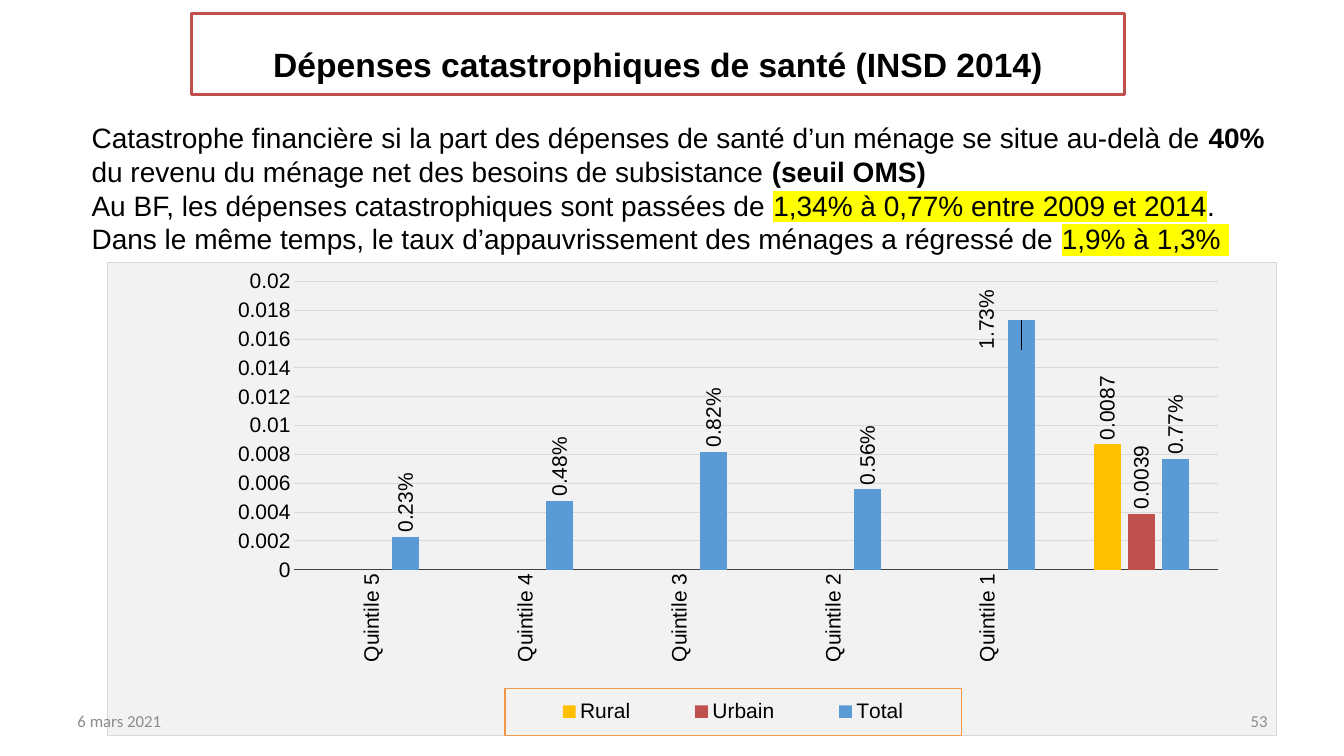
from dataclasses import dataclass
from typing import Optional

from lxml import etree
from pptx import Presentation
from pptx import util as u
from pptx.chart.data import CategoryChartData
from pptx.dml.color import RGBColor
from pptx.enum import chart as charts, shapes, text
from pptx.oxml import parse_xml
from pptx.oxml.ns import nsdecls, qn

PX = 9144
BLACK, GRAY, GRID = "000000", "8C8C8C", "D9D9D9"
RED, YELLOW = "C0504D", "FFFF00"


@dataclass(frozen=True)
class Span:
    words: str
    bold: bool = False
    highlight: Optional[str] = None


@dataclass(frozen=True)
class TextBlock:
    left: int
    top: int
    width: int
    height: int
    paragraphs: tuple[tuple[Span, ...], ...]
    size: int
    font: str = "Arial"
    color: str = BLACK
    align: text.PP_ALIGN = text.PP_ALIGN.LEFT
    anchor: text.MSO_ANCHOR = text.MSO_ANCHOR.MIDDLE
    spacing: float = 1.0
    outline: Optional[str] = None


@dataclass(frozen=True)
class Bars:
    name: str
    values: tuple[Optional[float], ...]
    color: str
    label_format: str = "General"


TITLE = TextBlock(
    190, 13, 925, 81,
    ((Span("Dépenses catastrophiques de santé (INSD 2014)", bold=True),),),
    24, align=text.PP_ALIGN.CENTER, spacing=1.5, outline=RED,
)
BODY = TextBlock(
    81, 115, 1186, 145,
    (
        (
            Span("Catastrophe financière si la part des dépenses de santé d’un ménage se situe au-delà de "),
            Span("40% ", bold=True),
            Span("du revenu du ménage net des besoins de subsistance "),
            Span("(seuil OMS)", bold=True),
        ),
        (
            Span("Au BF, les dépenses catastrophiques sont passées de "),
            Span("1,34% à 0,77% entre 2009 et 2014", highlight=YELLOW),
            Span(". Dans le même temps, le taux d’appauvrissement des ménages a régressé de "),
            Span("1,9% à 1,3% ", highlight=YELLOW),
        ),
    ),
    20, anchor=text.MSO_ANCHOR.TOP,
)
FOOTERS = (
    TextBlock(67, 695, 311, 40, ((Span("6 mars 2021"),),), 12, "Calibri", GRAY),
    TextBlock(956, 695, 311, 40, ((Span("53"),),), 12, "Calibri", GRAY, text.PP_ALIGN.RIGHT),
)
CATEGORIES = [f"Quintile {rank}" for rank in range(5, 0, -1)] + [""]
NO_QUINTILES = (None,) * 5
SERIES = (
    Bars("Rural", (*NO_QUINTILES, 0.0087), "FFC000"),
    Bars("Urbain", (*NO_QUINTILES, 0.0039), RED),
    Bars("Total", (0.0023, 0.0048, 0.0082, 0.0056, 0.0173, 0.0077), "5B9BD5", "0.00%"),
)


def rgb(color: str) -> RGBColor:
    return RGBColor.from_string(color)


def draw_text(page, block: TextBlock) -> None:
    area = [side * PX for side in (block.left, block.top, block.width, block.height)]
    if block.outline:
        box = page.shapes.add_shape(shapes.MSO_SHAPE.RECTANGLE, *area)
        box.shadow.inherit = False
        box.fill.solid()
        box.fill.fore_color.rgb = rgb("FFFFFF")
        box.line.color.rgb = rgb(block.outline)
        box.line.width = u.Pt(2)
    else:
        box = page.shapes.add_textbox(*area)
    frame = box.text_frame
    frame.word_wrap = True
    frame.vertical_anchor = block.anchor
    for index, spans in enumerate(block.paragraphs):
        para = frame.add_paragraph() if index else frame.paragraphs[0]
        para.alignment = block.align
        para.line_spacing = block.spacing
        para.font.size = u.Pt(block.size)
        para.font.name = block.font
        para.font.color.rgb = rgb(block.color)
        for span in spans:
            run = para.add_run()
            run.text = span.words
            run.font.bold = span.bold
            if span.highlight:
                mark = etree.SubElement(run.font._element, qn("a:highlight"))
                etree.SubElement(mark, qn("a:srgbClr"), val=span.highlight)


def layout(target: str = "", **places: float):
    modes = "".join(f'<c:{side}Mode val="edge"/>' for side in ("x", "y")) if "w" in places else ""
    values = "".join(f'<c:{side} val="{value}"/>' for side, value in places.items())
    inner = f'<c:layoutTarget val="{target}"/>' if target else ""
    return parse_xml(
        f'<c:layout {nsdecls("c")}><c:manualLayout>{inner}{modes}{values}</c:manualLayout></c:layout>'
    )


def frame_style(line: str, fill: str = ""):
    paint = f'<a:solidFill><a:srgbClr val="{fill}"/></a:solidFill>' if fill else "<a:noFill/>"
    return parse_xml(
        f'<c:spPr {nsdecls("c", "a")}>{paint}<a:ln w="9525"><a:solidFill>'
        f'<a:srgbClr val="{line}"/></a:solidFill></a:ln></c:spPr>'
    )


def set_font(font) -> None:
    font.size = u.Pt(15)
    font.name = "Arial"
    font.color.rgb = rgb(BLACK)


def turn_upright(element) -> None:
    body = element.find(qn("c:txPr")).find(qn("a:bodyPr"))
    body.set("rot", "-5400000")
    body.set("vert", "horz")


def drop_layout(element) -> None:
    for old in element.findall(qn("c:layout")):
        element.remove(old)


def style_axes(chart) -> None:
    for axis in (chart.category_axis, chart.value_axis):
        axis.major_tick_mark = axis.minor_tick_mark = charts.XL_TICK_MARK.NONE
        set_font(axis.tick_labels.font)
    chart.category_axis.format.line.color.rgb = rgb("404040")
    chart.category_axis.format.line.width = u.Pt(0.75)
    turn_upright(chart.category_axis._element)
    values = chart.value_axis
    values.minimum_scale, values.maximum_scale, values.major_unit = 0, 0.02, 0.002
    values.tick_labels.number_format = "General"
    values.tick_labels.number_format_is_linked = False
    values.format.line.fill.background()
    values.major_gridlines.format.line.color.rgb = rgb(GRID)
    values.major_gridlines.format.line.width = u.Pt(0.75)


def style_series(series, bars: Bars) -> None:
    series.format.fill.solid()
    series.format.fill.fore_color.rgb = rgb(bars.color)
    series.invert_if_negative = False
    labels = series.data_labels
    labels.show_value = True
    labels.number_format = bars.label_format
    labels.number_format_is_linked = False
    labels.position = charts.XL_LABEL_POSITION.OUTSIDE_END
    set_font(labels.font)
    turn_upright(labels._element)


def move_peak_label(series, index: int) -> None:
    label = series.points[index].data_label
    set_font(label.font)
    label.position = charts.XL_LABEL_POSITION.OUTSIDE_END
    element = series.data_labels._element.find(qn("c:dLbl"))
    turn_upright(element)
    number = parse_xml(f'<c:numFmt {nsdecls("c")} formatCode="0.00%" sourceLinked="0"/>')
    place = layout(x=-0.03, y=0.07)
    element.find(qn("c:idx")).addnext(place)
    place.addnext(number)


def style_legend(chart) -> None:
    chart.has_legend = True
    legend = chart.legend
    legend.position = charts.XL_LEGEND_POSITION.BOTTOM
    legend.include_in_layout = False
    set_font(legend.font)
    element = legend._element
    drop_layout(element)
    element.find(qn("c:legendPos")).addnext(layout(x=0.34, y=0.9, w=0.39, h=0.1))
    element.find(qn("c:overlay")).addnext(frame_style("F79646"))


def draw_chart(page) -> None:
    data = CategoryChartData()
    data.categories = CATEGORIES
    for bars in SERIES:
        data.add_series(bars.name, bars.values)
    area = [side * PX for side in (106, 260, 1161, 470)]
    chart = page.shapes.add_chart(charts.XL_CHART_TYPE.COLUMN_CLUSTERED, *area, data).chart
    chart.has_title = False
    set_font(chart.font)
    plot = chart.plots[0]
    plot.gap_width, plot.overlap, plot.vary_by_categories = 219, -27, False
    style_axes(chart)
    for series, bars in zip(plot.series, SERIES):
        style_series(series, bars)
    move_peak_label(plot.series[2], 4)
    style_legend(chart)
    body = chart._chartSpace.find(qn("c:chart"))
    body.addnext(frame_style(GRID, "F2F2F2"))
    plot_area = body.find(qn("c:plotArea"))
    drop_layout(plot_area)
    plot_area.insert(0, layout("inner", x=0.16, y=0.04, w=0.79, h=0.61))


def main() -> None:
    deck = Presentation()
    deck.slide_width, deck.slide_height = 1333 * PX, 750 * PX
    page = deck.slides.add_slide(deck.slide_layouts[6])
    draw_text(page, TITLE)
    draw_text(page, BODY)
    draw_chart(page)
    for footer in FOOTERS:
        draw_text(page, footer)
    deck.save("out.pptx")


if __name__ == "__main__":
    main()
